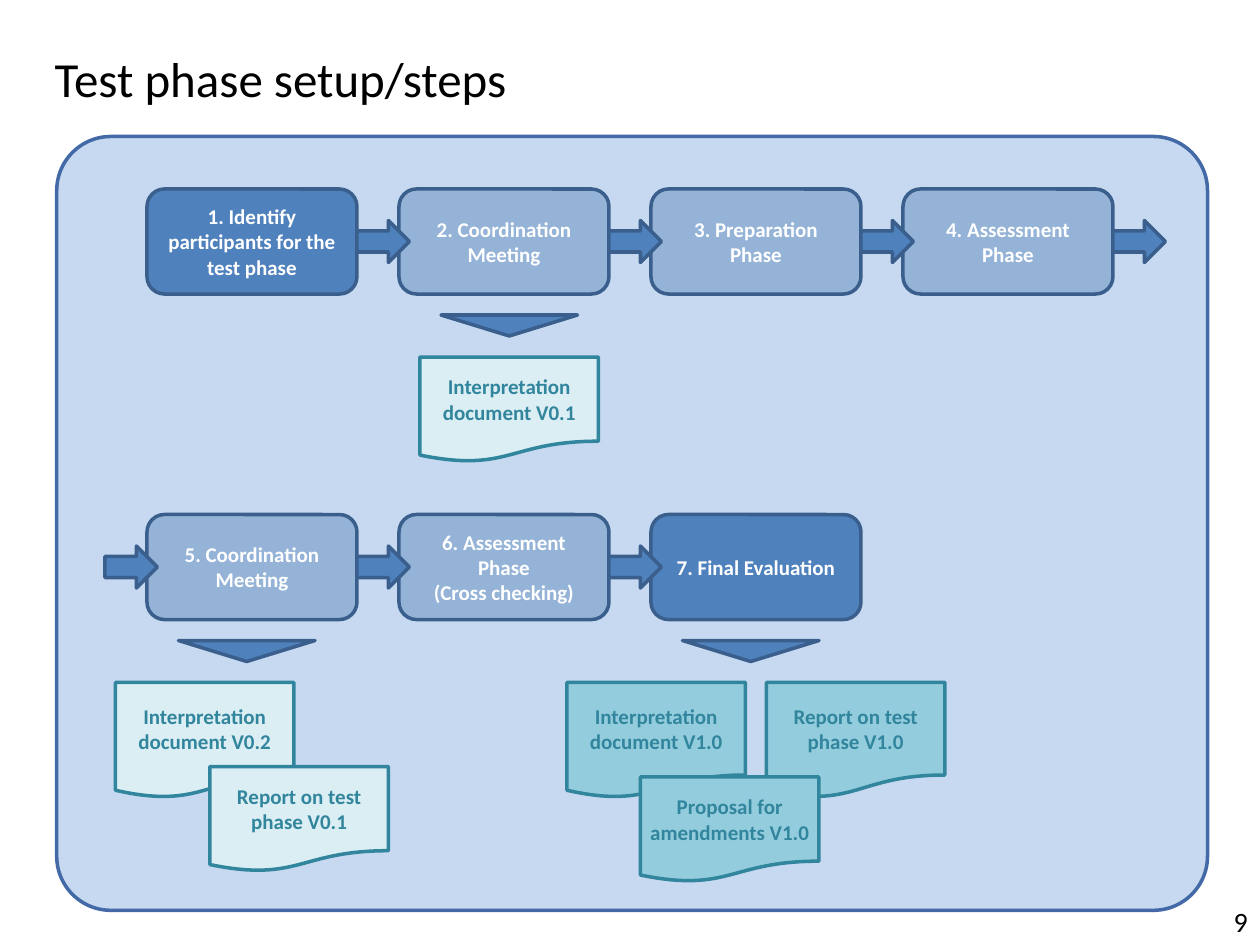
from dataclasses import dataclass

from pptx import Presentation
from pptx.dml.color import RGBColor
from pptx.enum.shapes import MSO_SHAPE as Shape
from pptx.enum.text import MSO_ANCHOR as Anchor, MSO_AUTO_SIZE as AutoSize, PP_ALIGN as Align
from pptx.util import Inches, Pt


@dataclass(frozen=True)
class Theme:
    font: str = "Calibri"
    title_size: int = 28
    number_size: int = 16
    label_size: int = 12
    line_width: int = 2
    black: str = "000000"
    white: str = "FFFFFF"
    panel: str = "C6D9F1"
    panel_line: str = "4369A7"
    strong: str = "4F81BD"
    soft: str = "95B3D7"
    step_line: str = "3A5F8C"
    draft: str = "DBEEF4"
    final: str = "93CDDD"
    document_line: str = "31859C"


THEME = Theme()
COLUMNS, ROWS = 120, 90
WIDTH, HEIGHT = Inches(10), Inches(7.5)
FIRST_STEP, STEP_PITCH, STEP_WIDTH, STEP_HEIGHT = 14, 24, 20, 10
ARROW_WIDTH, ARROW_HEIGHT = 5, 4
TOP_ROW, BOTTOM_ROW = 18, 49

STEPS = [
    (TOP_ROW, 0, THEME.strong, ["1. Identify participants for the test phase"]),
    (TOP_ROW, 1, THEME.soft, ["2. Coordination Meeting"]),
    (TOP_ROW, 2, THEME.soft, ["3. Preparation Phase"]),
    (TOP_ROW, 3, THEME.soft, ["4. Assessment Phase"]),
    (BOTTOM_ROW, 0, THEME.soft, ["5. Coordination Meeting"]),
    (BOTTOM_ROW, 1, THEME.soft, ["6. Assessment Phase", "(Cross checking)"]),
    (BOTTOM_ROW, 2, THEME.strong, ["7. Final Evaluation"]),
]
DOCUMENTS = [
    (40, 34, 10, THEME.draft, "Interpretation document V0.1"),
    (11, 65, 11, THEME.draft, "Interpretation document V0.2"),
    (20, 73, 10, THEME.draft, "Report on test phase V0.1"),
    (54, 65, 11, THEME.final, "Interpretation document V1.0"),
    (73, 65, 11, THEME.final, "Report on test phase V1.0"),
    (61, 74, 10, THEME.final, "Proposal for amendments V1.0"),
]
POINTERS = [(42, 30), (17, 61), (65, 61)]


def grid(left, top, width, height):
    across, down = WIDTH / COLUMNS, HEIGHT / ROWS
    return [round(v) for v in (left * across, top * down, width * across, height * down)]


def write(frame, lines, size, color, align, bold=False):
    for index, line in enumerate(lines):
        para = frame.paragraphs[0] if index == 0 else frame.add_paragraph()
        para.alignment = align
        span = para.add_run()
        span.text = line
        span.font.name = THEME.font
        span.font.size = Pt(size)
        span.font.bold = bold
        span.font.color.rgb = RGBColor.from_string(color)


def add_box(page, kind, cells, fill, line):
    box = page.shapes.add_shape(kind, *grid(*cells))
    box.shadow.inherit = False
    box.fill.solid()
    box.fill.fore_color.rgb = RGBColor.from_string(fill)
    box.line.color.rgb = RGBColor.from_string(line)
    box.line.width = Pt(THEME.line_width)
    return box


def add_label(box, lines, color):
    frame = box.text_frame
    frame.word_wrap = True
    frame.vertical_anchor = Anchor.MIDDLE
    write(frame, lines, THEME.label_size, color, Align.CENTER, bold=True)


def add_title(page, text):
    title = page.shapes.title
    title.left, title.top, title.width, title.height = grid(4, 4, 110, 6.8)
    frame = title.text_frame
    frame.auto_size = AutoSize.NONE
    frame.vertical_anchor = Anchor.TOP
    write(frame, [text], THEME.title_size, THEME.black, Align.LEFT)


def add_page_number(page, text):
    frame = page.shapes.add_textbox(*grid(100, 85.6, 20, 4.4)).text_frame
    frame.word_wrap = True
    write(frame, [text], THEME.number_size, THEME.black, Align.RIGHT)


def add_panel(page):
    panel = add_box(page, Shape.ROUNDED_RECTANGLE, (5.4, 13, 109.6, 73.7),
                    THEME.panel, THEME.panel_line)
    panel.adjustments[0] = 0.07


def add_step(page, row, column, fill, lines):
    left = FIRST_STEP + column * STEP_PITCH
    box = add_box(page, Shape.ROUNDED_RECTANGLE, (left, row, STEP_WIDTH, STEP_HEIGHT),
                  fill, THEME.step_line)
    add_label(box, lines, THEME.white)


def add_document(page, left, top, height, fill, text):
    box = add_box(page, Shape.FLOWCHART_DOCUMENT, (left, top, 17, height),
                  fill, THEME.document_line)
    box.text_frame.margin_left = box.text_frame.margin_right = 0
    add_label(box, [text], THEME.document_line)


def add_arrows(page, row, first_left, count):
    top = row + (STEP_HEIGHT - ARROW_HEIGHT) / 2
    for index in range(count):
        left = first_left + index * STEP_PITCH
        add_box(page, Shape.RIGHT_ARROW, (left, top, ARROW_WIDTH, ARROW_HEIGHT),
                THEME.strong, THEME.step_line)


def add_pointer(page, left, top):
    pointer = add_box(page, Shape.ISOSCELES_TRIANGLE, (left, top, 13, 2),
                      THEME.strong, THEME.step_line)
    pointer.rotation = 180


def main():
    deck = Presentation()
    deck.slide_width, deck.slide_height = WIDTH, HEIGHT
    page = deck.slides.add_slide(deck.slide_layouts[5])
    add_title(page, "Test phase setup/steps")
    add_page_number(page, "9")
    add_panel(page)
    for step in STEPS:
        add_step(page, *step)
    for document in DOCUMENTS:
        add_document(page, *document)
    for pointer in POINTERS:
        add_pointer(page, *pointer)
    after_first = FIRST_STEP + STEP_WIDTH
    add_arrows(page, TOP_ROW, after_first, 4)
    add_arrows(page, BOTTOM_ROW, after_first - STEP_PITCH, 3)
    deck.save("out.pptx")


if __name__ == "__main__":
    main()
